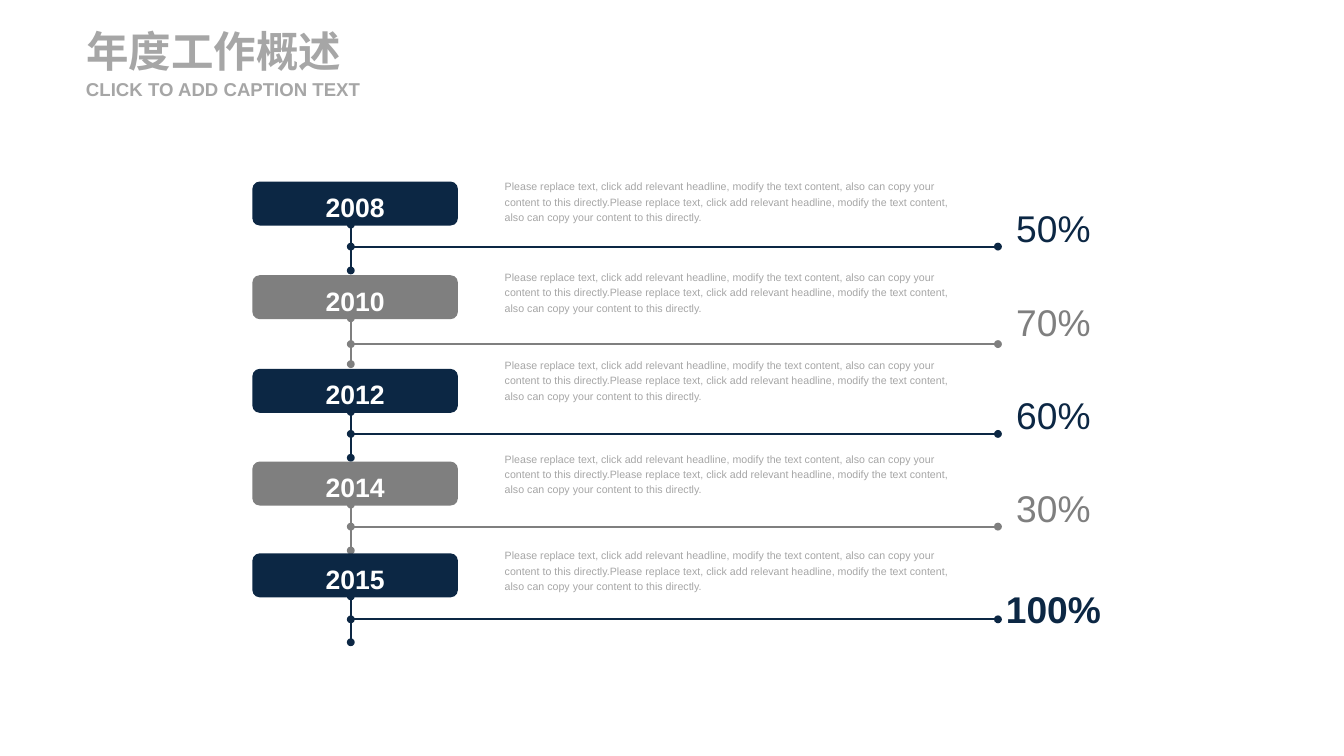
from lxml import etree
from pptx import Presentation
from pptx.dml.color import RGBColor
from pptx.enum.shapes import MSO_CONNECTOR, MSO_SHAPE
from pptx.enum.text import MSO_ANCHOR, MSO_AUTO_SIZE, PP_ALIGN
from pptx.oxml.ns import qn
from pptx.util import Pt

PX = 9144  # EMU per px, 100 px to the inch
NAVY = RGBColor(0x0C, 0x27, 0x44)
GRAY = RGBColor(0x7F, 0x7F, 0x7F)
LIGHT_GRAY = RGBColor(0xA6, 0xA6, 0xA6)
WHITE = RGBColor(0xFF, 0xFF, 0xFF)
STRAIGHT = MSO_CONNECTOR.STRAIGHT
ROUNDED = MSO_SHAPE.ROUNDED_RECTANGLE
TOP, MIDDLE = MSO_ANCHOR.TOP, MSO_ANCHOR.MIDDLE
LEFT, CENTER = PP_ALIGN.LEFT, PP_ALIGN.CENTER

STEM_X, RULE_END_X = 367, 1044
CARD_HEIGHT = 46
DESCRIPTION = (
    "Please replace text, click add relevant headline, modify the text content, "
    "also can copy your content to this directly."
) * 2
# year, percentage, card top, description top, rule y
MILESTONES = [
    ("2008", "50%", 190, 186, 258),
    ("2010", "70%", 288, 281, 360),
    ("2012", "60%", 386, 373, 454),
    ("2014", "30%", 483, 471, 551),
    ("2015", "100%", 579, 572, 648),
]


def write(shape, text, size, color, bold=False, align=LEFT, anchor=MIDDLE,
          spacing=1.0, wrap=True):
    """Fill a shape with one paragraph of Arial, without insets."""
    frame = shape.text_frame
    frame.margin_left = frame.margin_right = 0
    frame.margin_top = frame.margin_bottom = 0
    frame.auto_size = MSO_AUTO_SIZE.NONE
    frame.word_wrap = wrap
    frame.vertical_anchor = anchor
    paragraph = frame.paragraphs[0]
    paragraph.text = text
    paragraph.alignment = align
    paragraph.line_spacing = spacing
    paragraph.font.name = "Arial"
    paragraph.font.size = Pt(size)
    paragraph.font.bold = bold
    paragraph.font.color.rgb = color


def add_dotted_end_line(x1, y1, x2, y2, color):
    """Draw a line with a round dot at each end."""
    connector = slide.shapes.add_connector(
        STRAIGHT, x1 * PX, y1 * PX, x2 * PX, y2 * PX)
    connector.line.color.rgb = color
    connector.line.width = Pt(1.5)
    properties = connector._element.spPr
    outline = properties.find(qn("a:ln"))
    for end in ("a:headEnd", "a:tailEnd"):
        etree.SubElement(outline, qn(end), type="oval")
    etree.SubElement(properties, qn("a:effectLst"))


presentation = Presentation()
presentation.slide_width = 1406 * PX
presentation.slide_height = 791 * PX
slide = presentation.slides.add_slide(presentation.slide_layouts[5])

title = slide.shapes.title
title.left, title.top, title.width, title.height = 90 * PX, 26 * PX, 307 * PX, 54 * PX
write(title, "年度工作概述", 32, LIGHT_GRAY, bold=True)
caption = slide.shapes.add_textbox(90 * PX, 81 * PX, 307 * PX, 24 * PX)
write(caption, "CLICK TO ADD CAPTION TEXT", 14, LIGHT_GRAY, bold=True)

for index, (year, percentage, card_top, description_top, rule_y) in enumerate(MILESTONES):
    color = GRAY if index % 2 else NAVY
    is_last = index == len(MILESTONES) - 1

    card = slide.shapes.add_shape(
        ROUNDED, 264 * PX, card_top * PX, 215 * PX, CARD_HEIGHT * PX)
    card.shadow.inherit = False
    card.fill.solid()
    card.fill.fore_color.rgb = color
    card.line.fill.background()
    write(card, year, 20, WHITE, bold=True, align=CENTER, spacing=1.2)

    stem_top = card_top + CARD_HEIGHT - 1
    add_dotted_end_line(STEM_X, stem_top, STEM_X, stem_top + 48, color)
    add_dotted_end_line(RULE_END_X, rule_y, STEM_X, rule_y, color)

    description = slide.shapes.add_textbox(
        528 * PX, description_top * PX, 488 * PX, 48 * PX)
    write(description, DESCRIPTION, 8, LIGHT_GRAY, anchor=TOP, spacing=1.2)

    figure = slide.shapes.add_textbox(
        1052 * PX, (card_top + 19) * PX, 100 * PX, 58 * PX)
    write(figure, percentage, 28, color, bold=is_last, align=CENTER,
          spacing=1.4 if is_last else 1.0, wrap=False)

presentation.save("out.pptx")
